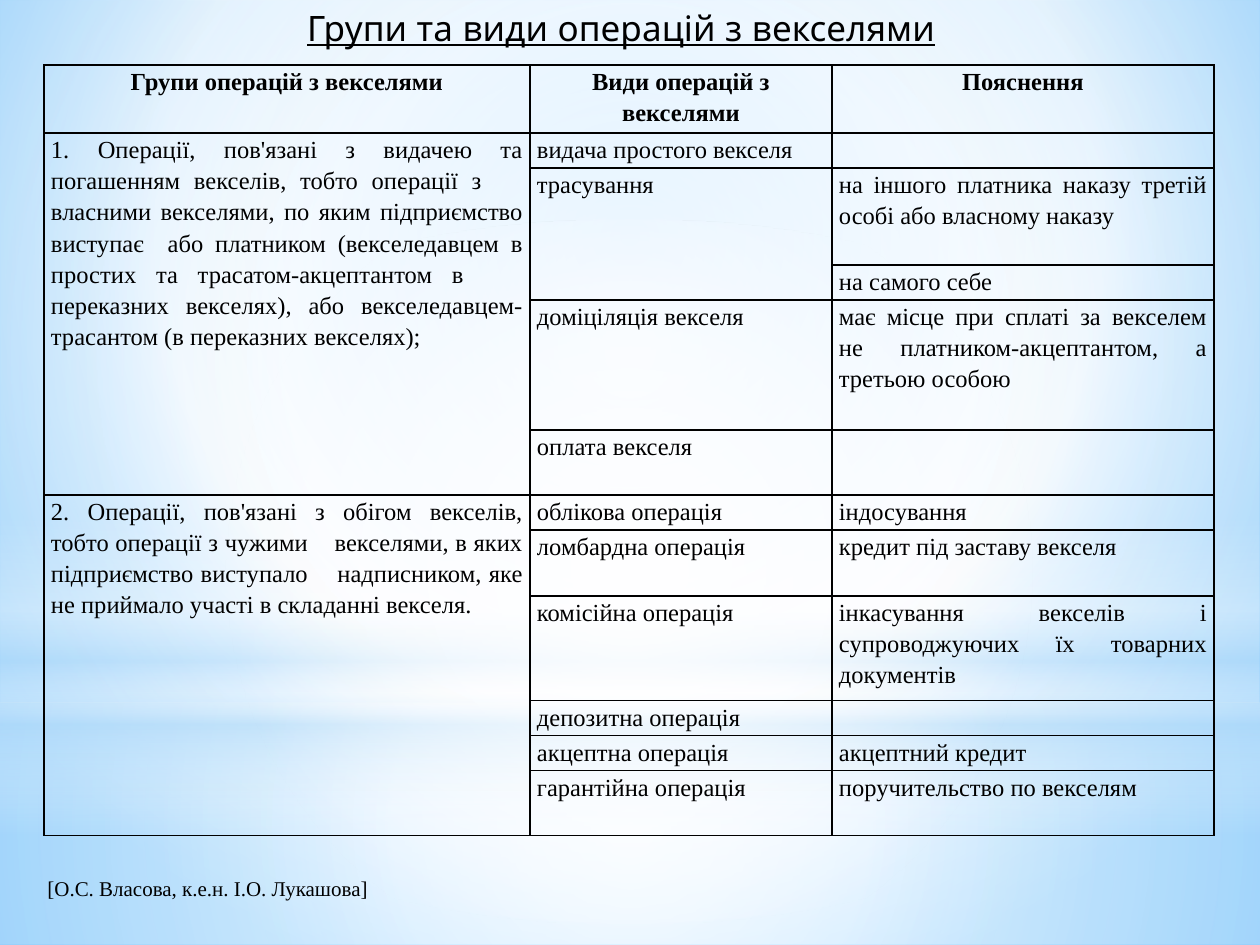
from dataclasses import dataclass

from lxml import etree
from pptx import Presentation
from pptx.dml.color import RGBColor
from pptx.enum import shapes, text
from pptx.oxml import ns
from pptx.util import Emu, Pt

PX = 914400 / 126  # EMU in one px


@dataclass(frozen=True)
class Theme:
    ink: str = "000000"
    white: str = "FFFFFF"
    haze: str = "B4DCFA"
    sky: str = "9ED5FF"
    deep: str = "5BB9FF"
    title_font: str = "Quicksand"
    body_font: str = "Times New Roman"
    title_size: int = 20
    table_size: int = 14
    note_size: int = 12
    border: int = 1
    spacing: float = 1.15


THEME = Theme()
CENTRE, JUSTIFY = text.PP_ALIGN.CENTER, text.PP_ALIGN.JUSTIFY

COLUMNS = [486, 302, 382]
ROW_HEIGHTS = [68, 35, 97, 35, 130, 65, 35, 66, 105, 35, 35, 65]
# None continues the cell above it
ROWS = [
    ("Групи операцій з векселями", "Види операцій з векселями", "Пояснення"),
    ("1. Операції, пов'язані з видачею та погашенням векселів, тобто операції "
     "з    власними векселями, по яким підприємство виступає  або платником "
     "(векселедавцем в простих та трасатом-акцептантом в    переказних "
     "векселях), або векселедавцем-трасантом (в переказних векселях);",
     "видача простого векселя", ""),
    (None, "трасування",
     "на іншого платника наказу третій особі або власному наказу"),
    (None, None, "на самого себе"),
    (None, "доміціляція векселя",
     "має місце при сплаті за векселем не платником-акцептантом, "
     "а третьою особою"),
    (None, "оплата векселя", ""),
    ("2. Операції, пов'язані з обігом векселів, тобто операції з чужими    "
     "векселями, в яких підприємство виступало    надписником, яке не "
     "приймало участі в складанні векселя.",
     "облікова операція", "індосування"),
    (None, "ломбардна операція", "кредит під заставу векселя"),
    (None, "комісійна операція",
     "інкасування векселів і супроводжуючих їх товарних документів"),
    (None, "депозитна операція", ""),
    (None, "акцептна операція", "акцептний кредит"),
    (None, "гарантійна операція", "поручительство по векселям"),
]


def px(*lengths):
    return [Emu(round(length * PX)) for length in lengths]


def add_node(parent, tag, **attributes):
    node = etree.SubElement(parent, ns.qn(tag))
    for name, value in attributes.items():
        node.set(name, str(value))
    return node


def set_gradient(root, stops, centre=None):
    """Swap the solid fill for stops of (position, colour, opacity)."""
    solid = root.find(".//" + ns.qn("a:solidFill"))
    gradient = etree.Element(ns.qn("a:gradFill"), rotWithShape="1")
    stop_list = add_node(gradient, "a:gsLst")
    for position, colour, opacity in stops:
        stop = add_node(stop_list, "a:gs", pos=position * 1000)
        shade = add_node(stop, "a:srgbClr", val=colour)
        if opacity < 100:
            add_node(shade, "a:alpha", val=opacity * 1000)
    if centre:
        path = add_node(gradient, "a:path", path="circle")
        sides = {side: share * 1000 for side, share in zip("ltrb", centre)}
        add_node(path, "a:fillToRect", **sides)
    else:
        add_node(gradient, "a:lin", ang=5400000, scaled=0)
    solid.getparent().replace(solid, gradient)


def add_glow(page, kind, top, height, stops, centre=(50, 50, 50, 50)):
    glow = page.shapes.add_shape(kind, *px(0, top, 1260, height))
    glow.shadow.inherit = False
    glow.line.fill.background()
    glow.fill.solid()
    set_gradient(glow.element, stops, centre)


def write(frame, words, *, font, size, align=None, bold=False,
          underline=False, spacing=None):
    para = frame.paragraphs[0]
    para.alignment = align
    para.line_spacing = spacing
    if not words:  # keeps an empty cell at the table's type size
        add_node(para._p, "a:endParaRPr", sz=size * 100)
        return
    span = para.add_run()
    span.text = words
    span.font.name = font
    span.font.size = Pt(size)
    span.font.bold = bold
    span.font.underline = underline
    span.font.color.rgb = RGBColor.from_string(THEME.ink)


def add_backdrop(page):
    white, haze = THEME.white, THEME.haze
    rectangle, oval = shapes.MSO_SHAPE.RECTANGLE, shapes.MSO_SHAPE.OVAL
    page.background.fill.solid()
    set_gradient(page.element,
                 [(0, THEME.sky, 100), (60, white, 100), (100, THEME.deep, 100)],
                 (20, 10, 20, 60))
    add_glow(page, rectangle, 703, 242,
             [(0, white, 91), (37, white, 76), (100, haze, 79)])
    add_glow(page, rectangle, 0, 703,
             [(0, white, 89), (48, white, 62), (100, haze, 79)])
    add_glow(page, rectangle, 519, 315,
             [(0, white, 0), (29, white, 30), (45, haze, 40),
              (55, white, 26), (65, haze, 60), (100, white, 0)], None)
    add_glow(page, oval, 220, 703, [(0, white, 100), (56, white, 0)])


def place_title(page, words):
    title = page.shapes.title
    title.left, title.top, title.width, title.height = px(54, 0, 1134, 147)
    title.element.getparent().append(title.element)  # above the backdrop
    title.text_frame.vertical_anchor = text.MSO_ANCHOR.TOP
    write(title.text_frame, words, font=THEME.title_font,
          size=THEME.title_size, align=CENTRE, underline=True)


def format_cell(cell):
    cell.margin_left, cell.margin_right = px(7, 7)
    cell.margin_top = cell.margin_bottom = 0
    properties = cell._tc.get_or_add_tcPr()
    for side in "LRTB":
        line = add_node(properties, f"a:ln{side}", w=Pt(THEME.border))
        add_node(add_node(line, "a:solidFill"), "a:srgbClr", val=THEME.ink)
    cell.fill.background()


def add_grid(page):
    frame = page.shapes.add_table(
        len(ROWS), len(COLUMNS),
        *px(44, 65, sum(COLUMNS), sum(ROW_HEIGHTS)))
    table = frame.table
    table.first_row = table.horz_banding = False
    for column, width in zip(table.columns, px(*COLUMNS)):
        column.width = width
    for row, height in zip(table.rows, px(*ROW_HEIGHTS)):
        row.height = height

    for r, entries in enumerate(ROWS):
        for c, words in enumerate(entries):
            cell = table.cell(r, c)
            format_cell(cell)
            write(cell.text_frame, words, font=THEME.body_font,
                  size=THEME.table_size, bold=r == 0,
                  align=JUSTIFY if r else CENTRE, spacing=THEME.spacing)

    # Merge each entry with the continuations below it
    for c in range(len(COLUMNS)):
        starts = [r for r, entries in enumerate(ROWS) if entries[c] is not None]
        for start, following in zip(starts, starts[1:] + [len(ROWS)]):
            if following - start > 1:
                table.cell(start, c).merge(table.cell(following - 1, c))


def add_note(page, words):
    box = page.shapes.add_textbox(*px(35, 869, 349, 38))
    box.text_frame.word_wrap = False
    box.text_frame.auto_size = text.MSO_AUTO_SIZE.SHAPE_TO_FIT_TEXT
    write(box.text_frame, words, font=THEME.body_font, size=THEME.note_size)


def main():
    deck = Presentation()
    deck.slide_width, deck.slide_height = px(1260, 945)
    page = deck.slides.add_slide(deck.slide_layouts.get_by_name("Title Only"))
    add_backdrop(page)
    place_title(page, "Групи та види операцій з векселями")
    add_grid(page)
    add_note(page, "[О.С. Власова, к.е.н. І.О. Лукашова]")
    deck.save("out.pptx")


if __name__ == "__main__":
    main()
